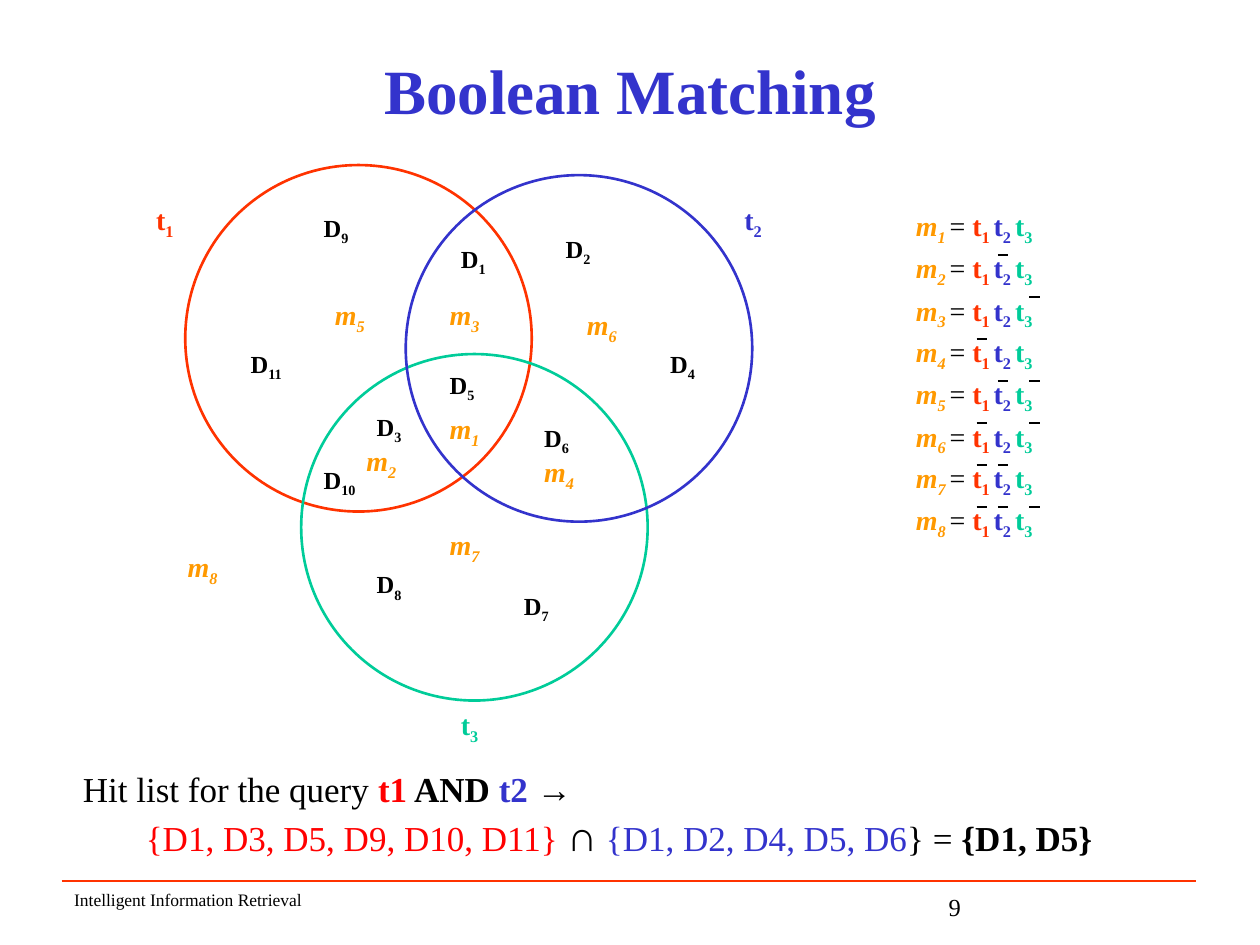
"""Build the Boolean Matching slide with its Venn diagram and minterm list."""
from lxml.etree import SubElement
from pptx import Presentation
from pptx.dml.color import RGBColor
from pptx.enum.shapes import MSO_CONNECTOR as Connector, MSO_SHAPE as Shape
from pptx.enum.text import MSO_ANCHOR as Anchor, PP_ALIGN as Align
from pptx.oxml.ns import qn
from pptx.util import Inches, Pt

FONT = "Times New Roman"
BLACK, RED, ORANGE = "000000", "FF0000", "FF9900"
TERM_COLORS = {"1": "FF3300", "2": "3333CC", "3": "00CC99"}
BLUE = TERM_COLORS["2"]

DIAMETER = 2.75
CIRCLES = [("1", 1.47, 1.31), ("3", 2.39, 2.81), ("2", 3.22, 1.39)]
TERMS = [("3", 3.56, 5.57), ("1", 1.14, 1.56), ("2", 5.81, 1.56)]
DOCUMENTS = [
    ("1", 3.56, 1.89), ("2", 4.39, 1.81), ("3", 2.89, 3.22), ("4", 5.22, 2.72),
    ("5", 3.47, 2.89), ("6", 4.22, 3.31), ("8", 2.89, 4.47), ("7", 4.06, 4.64),
    ("9", 2.47, 1.64), ("10", 2.47, 3.64), ("11", 1.89, 2.72),
]
MINTERMS = [
    ("1", 3.47, 3.22), ("2", 2.81, 3.47), ("3", 3.47, 2.31), ("5", 2.56, 2.31),
    ("4", 4.22, 3.56), ("7", 3.47, 4.14), ("8", 1.39, 4.31), ("6", 4.56, 2.39),
]
NEGATED_TERMS = ["", "2", "3", "1", "23", "13", "12", "123"]
BAR_LEFT = {"1": 7.75, "2": 7.92, "3": 8.17}
LIST_LEFT, LIST_TOP, ROW_STEP = 7.17, 1.61, 1 / 3
BAR_OFFSET, BAR_LENGTH = 0.08, 0.08

QUERY = [
    [("Hit list for the query ", BLACK, 20, False), ("t1", RED, 20, True),
     (" AND", BLACK, 20, True), (" t2 ", BLUE, 20, True), ("→", BLACK, 20, False)],
    [("\t", BLACK, 20, False), ("{D1, D3, D5, D9, D10, D11} ", RED, 20, False),
     ("∩", BLACK, 24, True), (" ", BLACK, 20, True),
     ("{D1, D2, D4, D5, D6", BLUE, 20, False), ("} = ", BLACK, 20, False),
     ("{D1, D5}", BLACK, 20, True)],
]


def rgb(color):
    return RGBColor.from_string(color)


def add_run(paragraph, text, color, size, bold=False, italic=False, subscript=False):
    run = paragraph.add_run()
    run.text = text
    font = run.font
    font.name, font.size, font.bold, font.italic = FONT, Pt(size), bold, italic
    font.color.rgb = rgb(color)
    if subscript:
        run._r.get_or_add_rPr().set("baseline", "-25000")


def add_symbol(paragraph, letter, index, color, size, italic=False, gap=""):
    add_run(paragraph, letter, color, size, True, italic)
    add_run(paragraph, index + gap, color, size, True, italic, True)


def add_text(slide, left, top, width, height):
    box = slide.shapes.add_textbox(*map(Inches, (left, top, width, height)))
    box.text_frame.word_wrap = True
    return box.text_frame


def add_line(slide, left, right, y, color, weight):
    line = slide.shapes.add_connector(
        Connector.STRAIGHT, Inches(left), Inches(y), Inches(right), Inches(y))
    line.line.color.rgb = rgb(color)
    line.line.width = Pt(weight)
    SubElement(line._element.spPr, qn("a:effectLst"))


def add_label(slide, letter, index, left, top, color, size, italic=False):
    frame = add_text(slide, left, top, 0.48, 0.37 if size == 16 else 0.33)
    add_symbol(frame.paragraphs[0], letter, index, color, size, italic)


def add_frame(slide):
    add_line(slide, 0.49, 9.49, 6.99, TERM_COLORS["1"], 1)
    footer = add_text(slide, 0.49, 7.01, 3.75, 0.25)
    add_run(footer.paragraphs[0], "Intelligent Information Retrieval", BLACK, 10)
    number = add_text(slide, 7.43, 7.03, 2.08, 0.25)
    add_run(number.paragraphs[0], "9", BLACK, 14)

    title = slide.shapes.title
    title.left, title.top = Inches(0.75), Inches(0.29)
    title.width, title.height = Inches(8.5), Inches(0.83)
    title.text_frame.vertical_anchor = Anchor.MIDDLE
    paragraph = title.text_frame.paragraphs[0]
    paragraph.alignment = Align.CENTER
    add_run(paragraph, "Boolean Matching", BLUE, 36, True)


def add_venn(slide):
    for term, left, top in CIRCLES:
        circle = slide.shapes.add_shape(
            Shape.OVAL, Inches(left), Inches(top), Inches(DIAMETER), Inches(DIAMETER))
        circle.shadow.inherit = False
        circle.fill.background()
        circle.line.color.rgb = rgb(TERM_COLORS[term])
        circle.line.width = Pt(1.5)
    for index, left, top in TERMS:
        add_label(slide, "t", index, left, top, TERM_COLORS[index], 16)
    for index, left, top in DOCUMENTS:
        add_label(slide, "D", index, left, top, BLACK, 14)
    for index, left, top in MINTERMS:
        add_label(slide, "m", index, left, top, ORANGE, 16, True)


def add_definitions(slide):
    for row, negated in enumerate(NEGATED_TERMS):
        top = LIST_TOP + row * ROW_STEP
        paragraph = add_text(slide, LIST_LEFT, top, 1.5, 0.37).paragraphs[0]
        paragraph.alignment = Align.JUSTIFY
        add_symbol(paragraph, "m", str(row + 1), ORANGE, 16, True, " ")
        add_run(paragraph, "= ", BLACK, 16)
        for term, color in TERM_COLORS.items():
            add_symbol(paragraph, "t", term, color, 16, gap=" ")
        for term in negated:
            left = BAR_LEFT[term]
            add_line(slide, left, left + BAR_LENGTH, top + BAR_OFFSET, BLACK, 1.5)


def add_query(slide):
    frame = add_text(slide, 0.56, 6.04, 8.79, 0.84)
    for number, runs in enumerate(QUERY):
        paragraph = frame.add_paragraph() if number else frame.paragraphs[0]
        for run in runs:
            add_run(paragraph, *run)


def main():
    presentation = Presentation()
    presentation.slide_width, presentation.slide_height = Inches(10), Inches(7.5)
    slide = presentation.slides.add_slide(presentation.slide_layouts[5])
    add_frame(slide)
    add_venn(slide)
    add_definitions(slide)
    add_query(slide)
    presentation.save("out.pptx")


if __name__ == "__main__":
    main()
